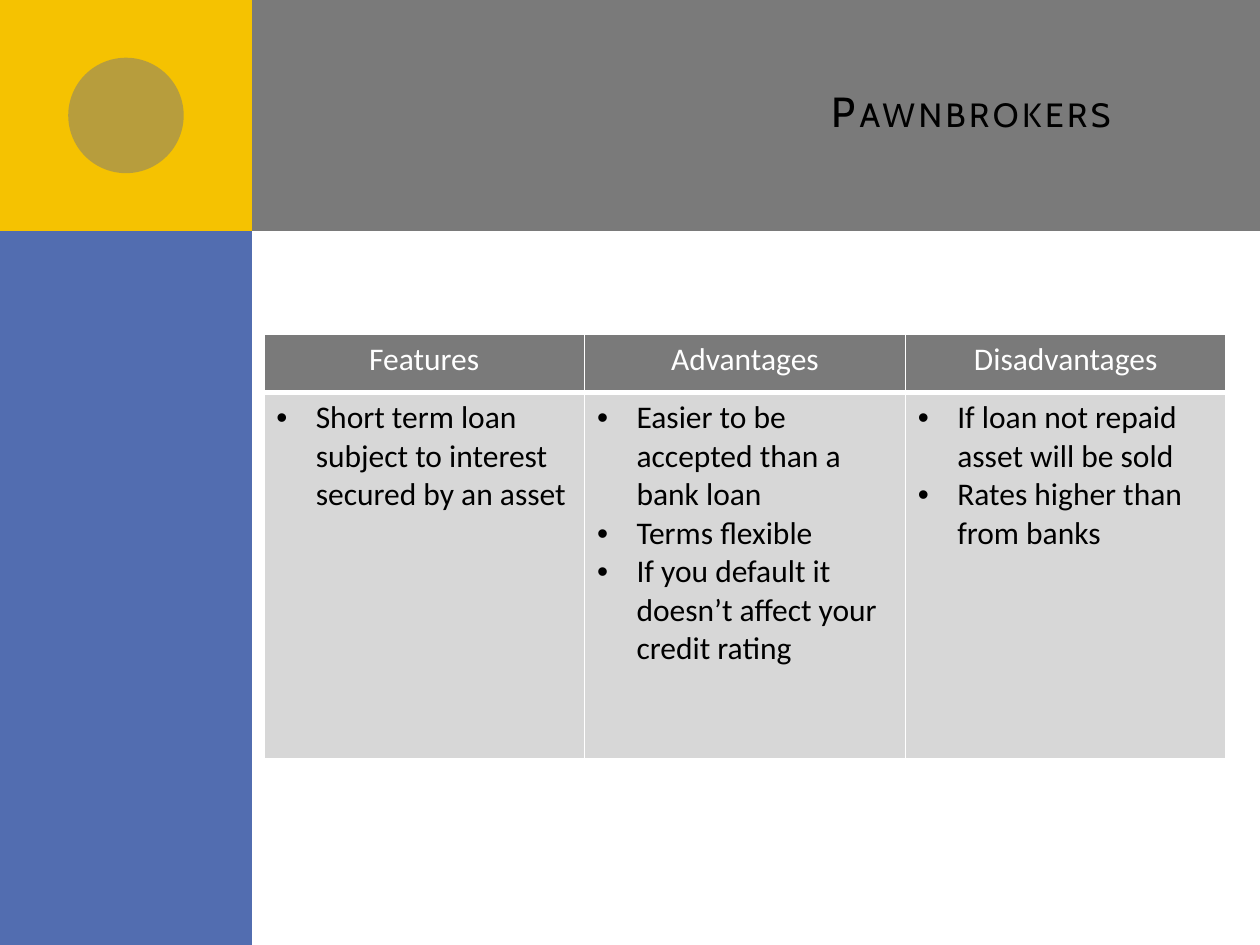
from lxml import etree
from pptx import Presentation
from pptx.dml.color import RGBColor
from pptx.enum import shapes, text
from pptx.oxml import ns
from pptx.util import Pt

GREY, BLUE, GOLD = "7A7A7A", "526DB0", "F5C201"
PALE, WHITE, BLACK = "D7D7D7", "FFFFFF", "000000"
RECT = shapes.MSO_SHAPE.RECTANGLE
OVAL = shapes.MSO_SHAPE.OVAL

COLUMNS = [
    ("Features", ["Short term loan subject to interest secured by an asset"]),
    ("Advantages", [
        "Easier to be accepted than a bank loan",
        "Terms flexible",
        "If you default it doesn’t affect your credit rating",
    ]),
    ("Disadvantages", [
        "If loan not repaid asset will be sold",
        "Rates higher than from banks",
    ]),
]


def paint(fill, color):
    fill.solid()
    fill.fore_color.rgb = RGBColor.from_string(color)


def child(node, tag, **attrs):
    return etree.SubElement(node, ns.qn(tag), **attrs)


def style(font, name, size, color):
    font.name = name
    font.size = Pt(size)
    font.bold = False
    font.color.rgb = RGBColor.from_string(color)


def block(slide, kind, box, color, alpha=None):
    shape = slide.shapes.add_shape(kind, *map(Pt, box))
    shape.shadow.inherit = False
    shape.line.fill.background()
    paint(shape.fill, color)
    if alpha:
        tint = shape.fill._xPr.find(".//" + ns.qn("a:srgbClr"))
        child(tint, "a:alpha", val=str(alpha * 1000))


def title(slide, words):
    shape = slide.shapes.title
    shape.left, shape.top, shape.width, shape.height = map(Pt, (192, 18, 492, 90))
    slide.shapes._spTree.append(shape._element)
    frame = shape.text_frame
    frame.word_wrap = True
    frame.vertical_anchor = text.MSO_ANCHOR.MIDDLE
    frame.margin_right = Pt(27)
    frame.text = words
    par = frame.paragraphs[0]
    par.alignment = text.PP_ALIGN.RIGHT
    font = par.runs[0].font
    style(font, "Cabin", 24, BLACK)
    font._element.set("cap", "small")
    font._element.set("spc", "200")


def border(cell, top, bottom):
    props = cell._tc.get_or_add_tcPr()
    for side, width in (("L", 1), ("R", 1), ("T", top), ("B", bottom)):
        line = child(props, "a:ln" + side, w=str(Pt(width)))
        child(child(line, "a:solidFill"), "a:srgbClr", val=WHITE)


def bullet(par):
    props = par._p.get_or_add_pPr()
    props.set("marL", str(Pt(22.5)))
    props.set("indent", str(Pt(-22.5)))
    child(props, "a:buFont", typeface="Arial")
    child(props, "a:buChar", char="•")


def head(cell, words):
    border(cell, 1, 3)
    paint(cell.fill, GREY)
    cell.text = words
    par = cell.text_frame.paragraphs[0]
    par.alignment = text.PP_ALIGN.CENTER
    style(par.font, "Calibri", 18, WHITE)


def body(cell, items):
    border(cell, 3, 1)
    paint(cell.fill, PALE)
    cell.text = "\n".join(items)
    for par in cell.text_frame.paragraphs:
        bullet(par)
        style(par.font, "Calibri", 18, BLACK)


def grid(slide):
    box = map(Pt, (150.75, 190.8, 549.9, 243))
    table = slide.shapes.add_table(2, len(COLUMNS), *box).table
    for row, height in zip(table.rows, (33.5, 209.5)):
        row.height = Pt(height)
    for col, (name, items) in enumerate(COLUMNS):
        table.columns[col].width = Pt(183.3)
        head(table.cell(0, col), name)
        body(table.cell(1, col), items)


def main():
    deck = Presentation()
    deck.slide_width, deck.slide_height = Pt(720), Pt(540)
    slide = deck.slides.add_slide(deck.slide_layouts[5])
    block(slide, RECT, (36, 0, 684, 132), GREY)
    block(slide, RECT, (0, 0, 144, 540), BLUE)
    block(slide, RECT, (0, 0, 144, 132), GOLD)
    block(slide, OVAL, (39, 33, 66, 66), GREY, 50)
    title(slide, "Pawnbrokers")
    grid(slide)
    deck.save("out.pptx")


if __name__ == "__main__":
    main()
